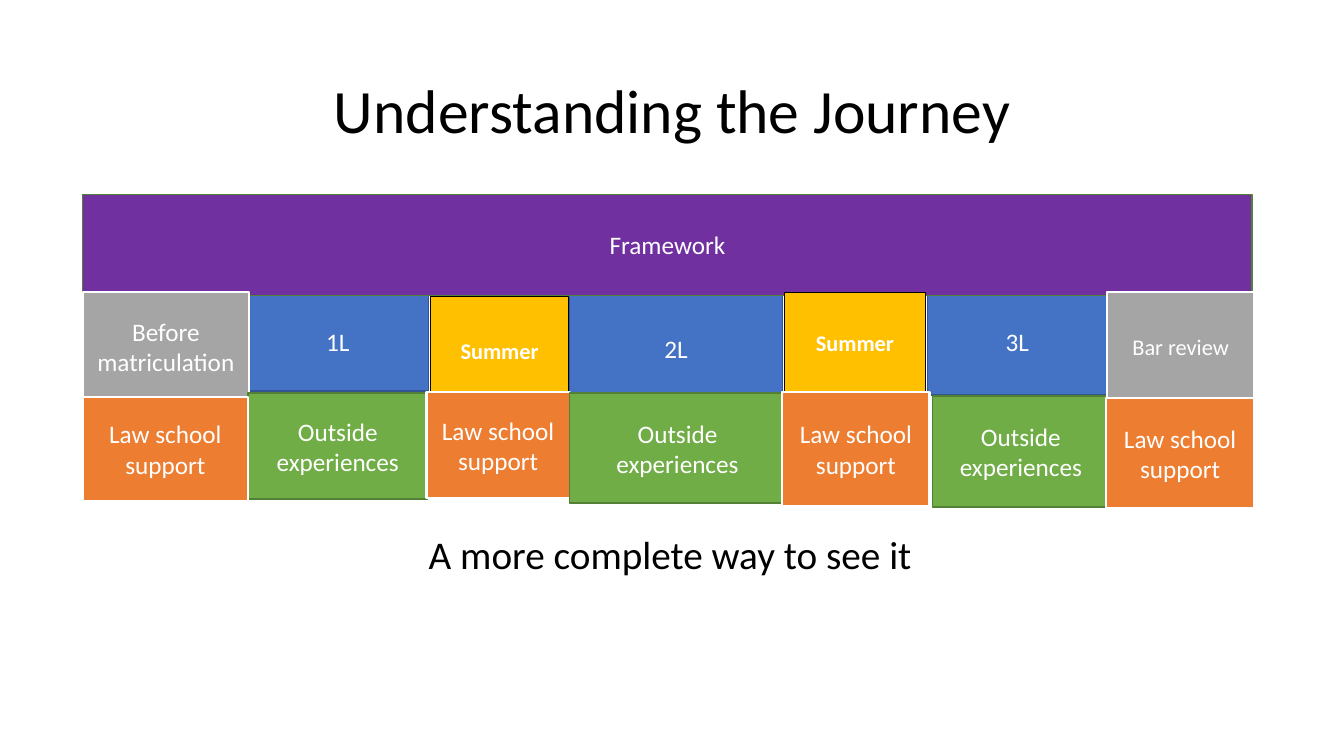
from pptx import Presentation
from pptx.dml.color import RGBColor
from pptx.enum.shapes import MSO_SHAPE
from pptx.enum.text import MSO_ANCHOR, PP_ALIGN
from pptx.util import Inches, Pt

BLACK = RGBColor(0x00, 0x00, 0x00)
WHITE = RGBColor(0xFF, 0xFF, 0xFF)
BLUE = RGBColor(0x44, 0x72, 0xC4)
DARK_BLUE = RGBColor(0x32, 0x54, 0x91)
PURPLE = RGBColor(0x70, 0x30, 0xA0)
GREEN = RGBColor(0x70, 0xAD, 0x47)
DARK_GREEN = RGBColor(0x53, 0x80, 0x35)
GRAY = RGBColor(0xA5, 0xA5, 0xA5)
ORANGE = RGBColor(0xED, 0x7D, 0x31)
GOLD = RGBColor(0xFF, 0xC0, 0x00)

# Block kinds: fill, line colour, line width, font format
BLOCK_STYLES = {
    "year": (BLUE, DARK_BLUE, 1, {}),
    "framework": (PURPLE, DARK_GREEN, 1, {}),
    "edge": (GRAY, WHITE, 1.5, {}),
    "review": (GRAY, WHITE, 1.5, {"size": Pt(16)}),
    "outside": (GREEN, DARK_GREEN, 1, {}),
    "support": (ORANGE, WHITE, 1.5, {}),
    "summer": (GOLD, BLACK, 1, {"size": Pt(16), "bold": True}),
}
SUPPORT = "Law school support"
OUTSIDE = "Outside\nexperiences"

# Blocks from back to front: kind, text, left, top, width, height
BLOCKS = [
    ("year", "1L", 2.45, 2.9, 1.8, 0.98),
    ("year", "2L", 5.65, 2.92, 2.11, 1.07),
    ("year", "3L", 9.2, 2.85, 1.78, 1.07),
    ("framework", "Framework", 0.82, 1.93, 11.6, 1),
    ("edge", "Before matriculation", 0.82, 2.9, 1.65, 1.07),
    ("outside", OUTSIDE, 2.46, 3.9, 1.78, 1.05),
    ("support", SUPPORT, 0.82, 3.94, 1.64, 1.03),
    ("summer", "Summer", 4.27, 2.94, 1.37, 1.07),
    ("summer", "Summer", 7.78, 2.9, 1.4, 1),
    ("support", SUPPORT, 4.23, 3.89, 1.42, 1.05),
    ("outside", OUTSIDE, 5.65, 3.9, 2.14, 1.09),
    ("support", SUPPORT, 7.76, 3.89, 1.46, 1.13),
    ("outside", OUTSIDE, 9.25, 3.93, 1.75, 1.1),
    ("review", "Bar review", 10.98, 2.9, 1.46, 1.07),
    ("support", SUPPORT, 10.97, 3.95, 1.47, 1.09),
]


class SlideBuilder:
    """Holds the text style and the current slide."""

    def __init__(self, slide, font_name):
        self.slide = slide
        self.font_name = font_name

    def set_text(self, shape, text, color, line_spacing=1.0, **font_format):
        frame = shape.text_frame
        frame.word_wrap = True
        frame.vertical_anchor = MSO_ANCHOR.MIDDLE
        frame.text = text
        for paragraph in frame.paragraphs:
            paragraph.alignment = PP_ALIGN.CENTER
            paragraph.line_spacing = line_spacing
            font = paragraph.runs[0].font
            font.color.rgb = color
            for name, value in {"name": self.font_name, **font_format}.items():
                setattr(font, name, value)

    def title(self, text, left, top, width, height):
        shape = self.slide.shapes.title
        box = {"left": left, "top": top, "width": width, "height": height}
        for name, value in box.items():
            setattr(shape, name, Inches(value))
        self.set_text(shape, text, BLACK, 0.9, size=Pt(44))

    def caption(self, text, *box):
        shape = self.slide.shapes.add_textbox(*map(Inches, box))
        self.set_text(shape, text, BLACK, 0.9, size=Pt(28))

    def block(self, kind, text, *box):
        fill, line, line_width, font_format = BLOCK_STYLES[kind]
        shape = self.slide.shapes.add_shape(MSO_SHAPE.RECTANGLE, *map(Inches, box))
        shape.shadow.inherit = False
        shape.fill.solid()
        shape.fill.fore_color.rgb = fill
        shape.line.color.rgb = line
        shape.line.width = Pt(line_width)
        self.set_text(shape, text, WHITE, **{"size": Pt(18), **font_format})


def main():
    presentation = Presentation()
    presentation.slide_width = Inches(13.33)
    presentation.slide_height = Inches(7.5)
    slide = presentation.slides.add_slide(presentation.slide_layouts[5])
    builder = SlideBuilder(slide, "Calibri")

    # Title and caption
    builder.title("Understanding the Journey", 0.92, 0.4, 11.5, 1.45)
    builder.caption("A more complete way to see it", 0.17, 5.2, 12.95, 0.65)

    # Journey blocks
    for block in BLOCKS:
        builder.block(*block)

    presentation.save("out.pptx")


if __name__ == "__main__":
    main()
